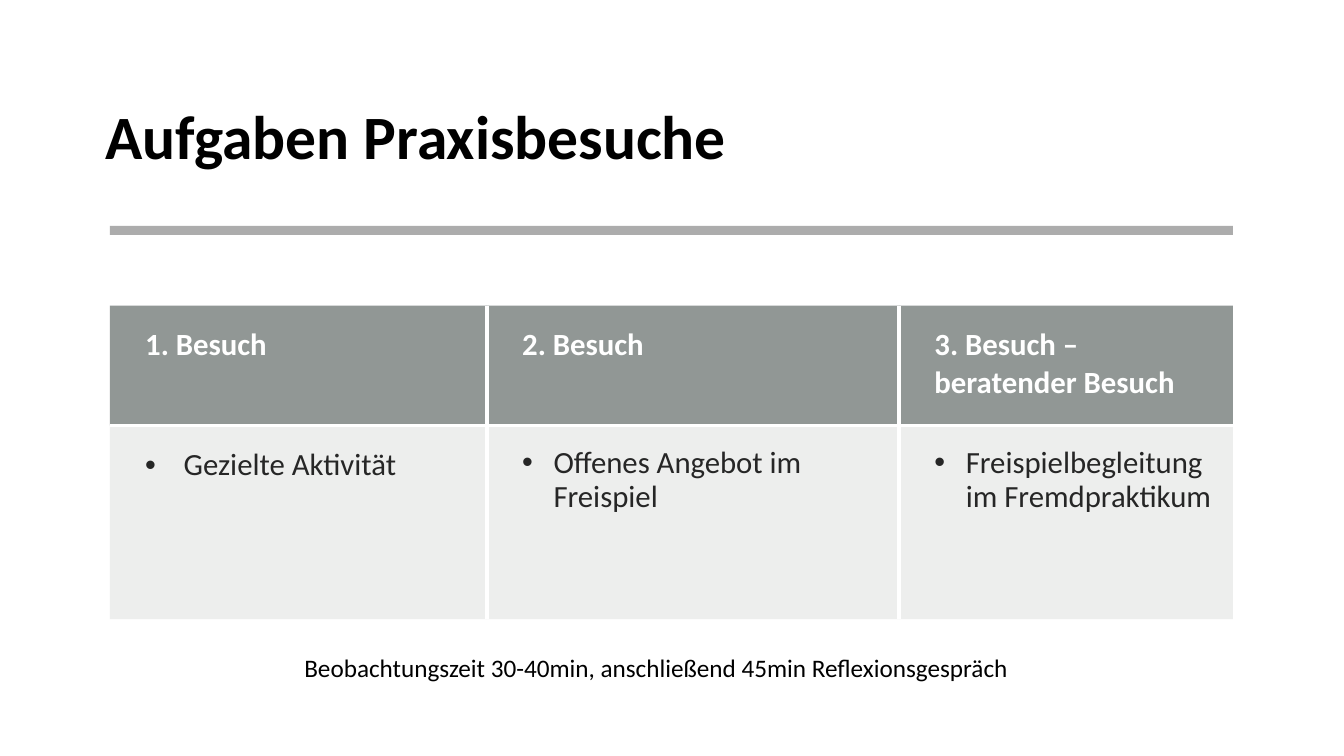
"""Builds the slide on the tasks of the practice visits."""
from dataclasses import dataclass

from lxml import etree
from pptx import Presentation
from pptx.dml.color import RGBColor
from pptx.enum.shapes import MSO_SHAPE
from pptx.enum.text import MSO_ANCHOR, MSO_AUTO_SIZE, PP_ALIGN
from pptx.oxml.ns import qn
from pptx.util import Cm, Pt

RECT = MSO_SHAPE.RECTANGLE
MIDDLE = MSO_ANCHOR.MIDDLE
FIXED = MSO_AUTO_SIZE.NONE
LEFT = PP_ALIGN.LEFT

BLACK = RGBColor(0x00, 0x00, 0x00)
WHITE = RGBColor(0xFF, 0xFF, 0xFF)
DARK = RGBColor(0x26, 0x26, 0x26)
GRAY = RGBColor(0x80, 0x80, 0x80)
HEAD = RGBColor(0x63, 0x6B, 0x68)
BODY = RGBColor(0x87, 0x8E, 0x8B)

FONT = "Calibri"
EDGE = 2.77
WIDTH = 28.3
ROWS = (3.02, 4.88)


@dataclass
class Visit:
    head: str
    task: str
    width: float
    indent: float = 0.79
    lines: float = 0.9
    before: float = 10


VISITS = (
    Visit("1. Besuch", "Gezielte Aktivität", 9.5, 0.97, 1.0, 0),
    Visit("2. Besuch", "Offenes Angebot im Freispiel", 10.39),
    Visit("3. Besuch – beratender Besuch",
          "Freispielbegleitung im Fremdpraktikum", 8.41),
)


def write(frame, text: str, *, size: float, color: RGBColor = BLACK,
          bold: bool = False, lines: float = 1.0, before: float = 0,
          indent: float = 0) -> None:
    frame.word_wrap = True
    para = frame.paragraphs[0]
    para.alignment = LEFT
    para.line_spacing = lines
    para.space_before = Pt(before)
    run = para.add_run()
    run.text = text
    font = run.font
    font.name, font.size, font.bold = FONT, Pt(size), bold
    font.color.rgb = color
    if indent:
        props = para._p.get_or_add_pPr()
        props.set("marL", str(Cm(indent)))
        props.set("indent", str(-Cm(indent)))
        etree.SubElement(props, qn("a:buFont")).set("typeface", "Arial")
        etree.SubElement(props, qn("a:buChar")).set("char", "•")


def paint(fill, color: RGBColor, alpha: int, root) -> None:
    fill.solid()
    fill.fore_color.rgb = color
    tone = root.find(qn("a:solidFill")).find(qn("a:srgbClr"))
    etree.SubElement(tone, qn("a:alpha")).set("val", str(alpha * 1000))


def border(cell, sides: dict[str, bool]) -> None:
    props = cell._tc.get_or_add_tcPr()
    for spot, (side, shown) in enumerate(sides.items()):
        line = etree.Element(qn(f"a:ln{side}"), w=str(Pt(3)))
        if shown:
            solid = etree.SubElement(line, qn("a:solidFill"))
            etree.SubElement(solid, qn("a:srgbClr")).set("val", str(WHITE))
        else:
            etree.SubElement(line, qn("a:noFill"))
        props.insert(spot, line)


def add_title(slide) -> None:
    title = slide.shapes.title
    title.left, title.top = Cm(2.41), Cm(1.68)
    title.width, title.height = Cm(29.03), Cm(3.68)
    frame = title.text_frame
    frame.auto_size = FIXED
    frame.vertical_anchor = MIDDLE
    write(frame, "Aufgaben Praxisbesuche", size=44, bold=True, lines=0.9)


def add_bar(slide) -> None:
    bar = slide.shapes.add_shape(RECT, Cm(EDGE), Cm(5.69), Cm(WIDTH), Cm(0.23))
    bar.shadow.inherit = False
    bar.line.fill.background()
    paint(bar.fill, GRAY, 65, bar._element.spPr)


def add_grid(slide) -> None:
    table = slide.shapes.add_table(
        len(ROWS), len(VISITS), Cm(EDGE), Cm(7.7), Cm(WIDTH), Cm(sum(ROWS))
    ).table
    table.first_row = table.horz_banding = False
    for row, height in zip(table.rows, ROWS):
        row.height = Cm(height)
    last = len(VISITS) - 1
    for col, visit in enumerate(VISITS):
        table.columns[col].width = Cm(visit.width)
        top, low = table.cell(0, col), table.cell(1, col)
        for cell, tone, alpha in ((top, HEAD, 70), (low, BODY, 15)):
            cell.margin_left = Cm(0.89)
            cell.margin_right = cell.margin_top = cell.margin_bottom = Cm(0.53)
            paint(cell.fill, tone, alpha, cell._tc.get_or_add_tcPr())
            border(cell, {"L": col > 0, "R": col < last,
                          "T": cell is low, "B": cell is top})
        write(top.text_frame, visit.head, size=22, color=WHITE, bold=True)
        write(low.text_frame, visit.task, size=22, color=DARK,
              lines=visit.lines, before=visit.before, indent=visit.indent)


def add_note(slide) -> None:
    note = slide.shapes.add_textbox(Cm(7.42), Cm(16.31), Cm(22.12), Cm(1.02))
    write(note.text_frame,
          "Beobachtungszeit 30-40min, anschließend 45min Reflexionsgespräch",
          size=18)


def main() -> None:
    deck = Presentation()
    deck.slide_width, deck.slide_height = Cm(33.87), Cm(19.05)
    slide = deck.slides.add_slide(deck.slide_layouts[5])
    add_title(slide)
    add_bar(slide)
    add_grid(slide)
    add_note(slide)
    deck.save("out.pptx")


if __name__ == "__main__":
    main()
